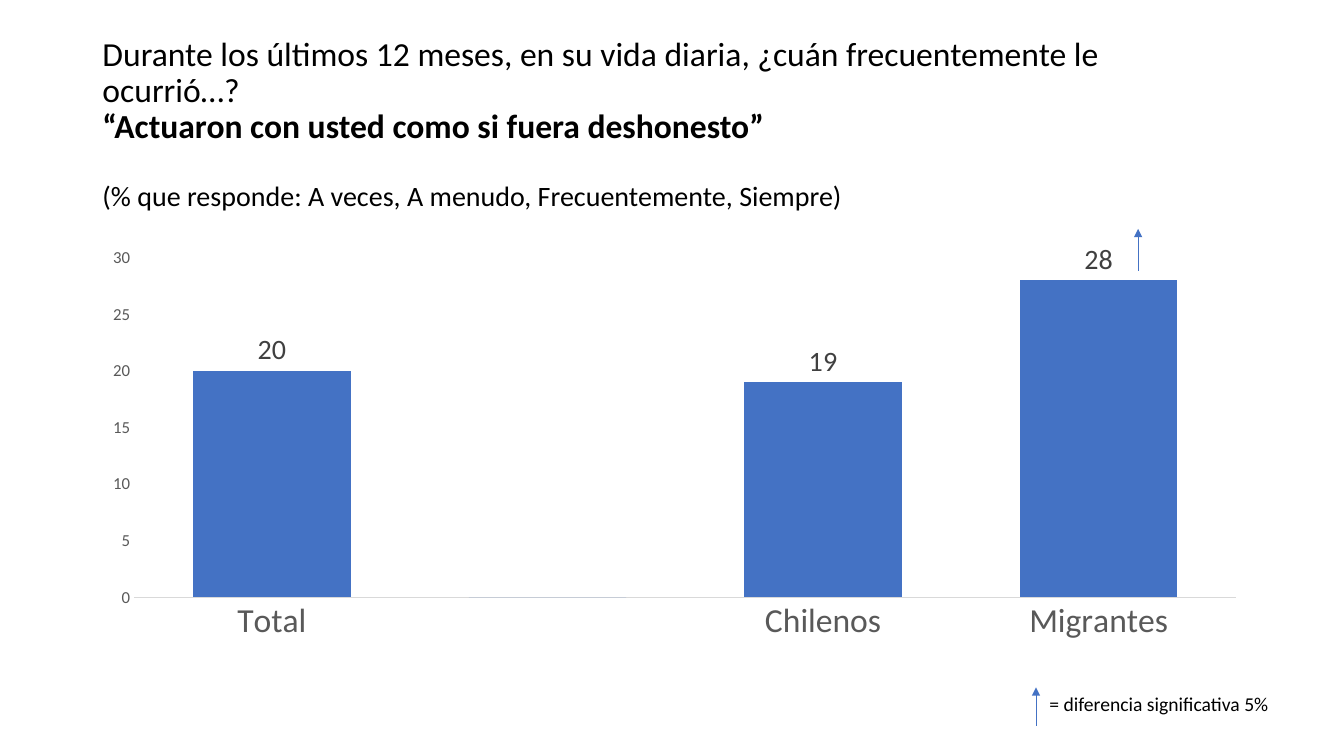
from lxml import etree
from pptx import Presentation
from pptx.chart.data import CategoryChartData
from pptx.dml.color import RGBColor
from pptx.enum import chart as ch, shapes, text
from pptx.oxml import parse_xml
from pptx.oxml.ns import nsdecls, qn
from pptx.util import Pt

FONT = "Calibri"
COLORS = {"text": "000000", "bar": "4472C4", "axis_text": "595959",
          "axis_line": "D9D9D9", "label": "404040"}


def rgb(name):
    return RGBColor.from_string(COLORS[name])


def style(font, size, color, bold=False):
    font.name = FONT
    font.size = Pt(size)
    font.bold = bold
    font.color.rgb = rgb(color)


def add_title(s, lines, left, top, width, height):
    """Fill the title with (text, size, bold) lines parted by line breaks."""
    title = s.shapes.title
    title.left, title.top, title.width, title.height = map(
        Pt, (left, top, width, height))
    tf = title.text_frame
    tf.vertical_anchor = text.MSO_ANCHOR.MIDDLE
    p = tf.paragraphs[0]
    p.text = "".join(line for line, _, _ in lines)
    p.alignment = text.PP_ALIGN.LEFT
    p.line_spacing = 0.9
    for r, (_, size, bold) in zip(p.runs, lines):
        style(r.font, size, "text", bold)
    # Line breaks carry their own text size
    for br in p._p.findall(qn("a:br")):
        etree.SubElement(br, qn("a:rPr")).set("sz", "2400")


def add_bar_chart(s, categories, values, left, top, width, height):
    data = CategoryChartData()
    data.categories = categories
    data.add_series("Series 1", values)
    chart = s.shapes.add_chart(ch.XL_CHART_TYPE.COLUMN_CLUSTERED, Pt(left),
                               Pt(top), Pt(width), Pt(height), data).chart
    chart.has_legend = chart.has_title = False
    style(chart.font, 10, "text")

    # Axes
    cat, val = chart.category_axis, chart.value_axis
    for axis, size in ((cat, 24), (val, 12)):
        axis.major_tick_mark = axis.minor_tick_mark = ch.XL_TICK_MARK.NONE
        axis.has_major_gridlines = False
        style(axis.tick_labels.font, size, "axis_text")
    cat.format.line.color.rgb = rgb("axis_line")
    cat.format.line.width = Pt(0.75)
    val.format.line.fill.background()
    val.minimum_scale, val.maximum_scale, val.major_unit = 0, 30, 5

    # Bars and their labels; the number format hides the zero of the gap
    plot = chart.plots[0]
    plot.gap_width = 75
    plot.vary_by_categories = False
    series = plot.series[0]
    series.format.fill.solid()
    series.format.fill.fore_color.rgb = rgb("bar")
    labels = series.data_labels
    labels.show_value = True
    labels.position = ch.XL_LABEL_POSITION.OUTSIDE_END
    labels.number_format = "0;;"
    labels.number_format_is_linked = False
    style(labels.font, 20, "label")
    set_plot_area(chart, x=0.036, y=0.065, w=0.951, h=0.76)


def set_plot_area(chart, **box):
    area = chart._chartSpace.chart.plotArea
    for old in area.findall(qn("c:layout")):
        area.remove(old)
    modes = '<c:xMode val="edge"/><c:yMode val="edge"/>'
    sizes = "".join(f'<c:{key} val="{v}"/>' for key, v in box.items())
    area.insert(0, parse_xml(
        f'<c:layout {nsdecls("c")}><c:manualLayout>'
        f'<c:layoutTarget val="inner"/>{modes}{sizes}'
        '</c:manualLayout></c:layout>'))


def add_up_arrow(s, x, bottom, top):
    arrow = s.shapes.add_connector(shapes.MSO_CONNECTOR.STRAIGHT,
                                   Pt(x), Pt(bottom), Pt(x), Pt(top))
    arrow.line.color.rgb = rgb("bar")
    arrow.line.width = Pt(0.5)
    etree.SubElement(arrow.line._get_or_add_ln(),
                     qn("a:tailEnd")).set("type", "triangle")
    etree.SubElement(arrow._element.spPr, qn("a:effectLst"))


def add_note(s, words, left, top, width, height):
    tf = s.shapes.add_textbox(Pt(left), Pt(top), Pt(width), Pt(height)).text_frame
    tf.word_wrap = False
    tf.auto_size = text.MSO_AUTO_SIZE.SHAPE_TO_FIT_TEXT
    tf.text = words
    style(tf.paragraphs[0].runs[0].font, 14, "text")


def main():
    prs = Presentation()
    prs.slide_width, prs.slide_height = Pt(960), Pt(540)
    s = prs.slides.add_slide(prs.slide_layouts[5])

    # Question
    add_title(s, [
        ("Durante los últimos 12 meses, en su vida diaria, "
         "¿cuán frecuentemente le ocurrió…?\v", 24, False),
        ("“Actuaron con usted como si fuera deshonesto”\v\v", 24, True),
        ("(% que responde: A veces, A menudo, Frecuentemente, Siempre)",
         20, False),
    ], 66, 15, 801, 148.5)

    # Answers by group
    add_bar_chart(s, ["Total", " ", "Chilenos", "Migrantes"], [20, 0, 19, 28],
                  66, 163.5, 828, 319)

    # Significance mark and its key
    add_up_arrow(s, 813, 193.5, 163.5)
    add_up_arrow(s, 740, 518.5, 491)
    add_note(s, "= diferencia significativa 5%", 742.5, 491, 173, 24.5)

    prs.save("out.pptx")


if __name__ == "__main__":
    main()
